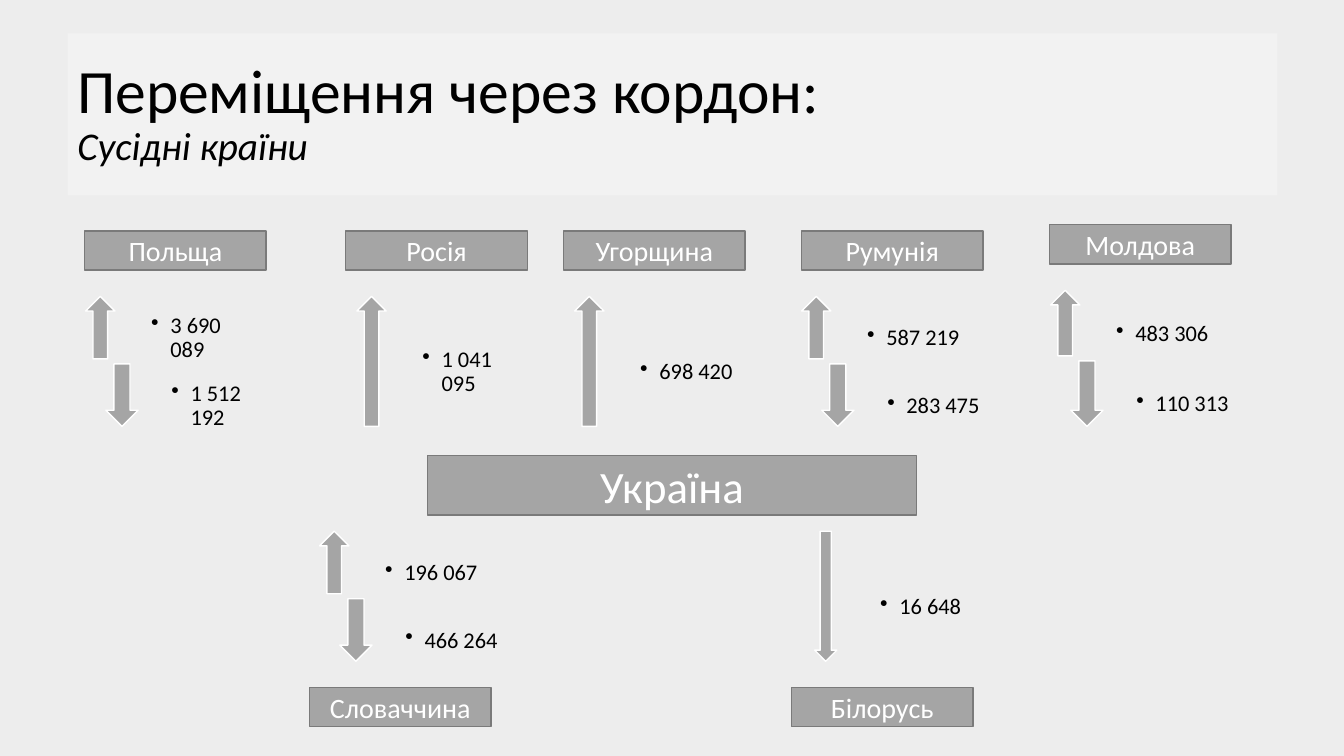
from lxml import etree
from pptx import Presentation
from pptx.dml.color import RGBColor
from pptx.enum import shapes, text
from pptx.oxml import ns
from pptx.util import Inches, Pt

BACK = RGBColor(0xED, 0xED, 0xED)
PANEL = RGBColor(0xF2, 0xF2, 0xF2)
GREY = RGBColor(0xA5, 0xA5, 0xA5)
EDGE = RGBColor(0x7A, 0x7A, 0x7A)
WHITE = RGBColor(0xFF, 0xFF, 0xFF)
BLACK = RGBColor(0, 0, 0)
SHAPE = shapes.MSO_SHAPE

prs = Presentation()
prs.slide_width, prs.slide_height = Inches(13.33), Inches(7.5)
s = prs.slides.add_slide(prs.slide_layouts[6])
s.background.fill.solid()
s.background.fill.fore_color.rgb = BACK


def add_block(kind, x, y, w, h, fill=GREY, line=None, label="", size=20):
    sp = s.shapes.add_shape(kind, Inches(x), Inches(y), Inches(w), Inches(h))
    sp.shadow.inherit = False
    sp.fill.solid()
    sp.fill.fore_color.rgb = fill
    if line is None:
        sp.line.fill.background()
    else:
        sp.line.color.rgb = line
        sp.line.width = Pt(1)
    if label:
        p = sp.text_frame.paragraphs[0]
        p.text = label
        p.alignment = text.PP_ALIGN.CENTER
        p.font.name, p.font.size, p.font.color.rgb = "Calibri", Pt(size), WHITE
    return sp


def add_flow(kind, x, y, w, h, value):
    add_block(kind, x, y, w, h, line=WHITE)
    box_h = 0.6
    tb = s.shapes.add_textbox(Inches(x + 0.53), Inches(y + h / 2 + 0.11 - box_h / 2),
                              Inches(1.21), Inches(box_h))
    tf = tb.text_frame
    tf.word_wrap = True
    tf.vertical_anchor = text.MSO_ANCHOR.MIDDLE
    tf.margin_left = tf.margin_right = Inches(0.12)
    tf.margin_top = tf.margin_bottom = 0
    p = tf.paragraphs[0]
    p.text = value
    p.line_spacing = 0.9
    p.font.name, p.font.size, p.font.color.rgb = "Calibri", Pt(16), BLACK
    pPr = p._p.get_or_add_pPr()
    pPr.set("marL", str(Inches(0.19)))
    pPr.set("indent", str(-Inches(0.19)))
    bullet = etree.Element(ns.qn("a:buChar"), char="•")
    pPr.insert_element_before(bullet, "a:tabLst", "a:defRPr", "a:extLst")


title = add_block(SHAPE.RECTANGLE, 0.67, 0.33, 12, 1.61, PANEL)
tf = title.text_frame
tf.vertical_anchor = text.MSO_ANCHOR.MIDDLE
p = tf.paragraphs[0]
p.alignment = text.PP_ALIGN.LEFT
p.line_spacing = 0.9
p.font.name, p.font.color.rgb = "Calibri", BLACK
for line, size, italic in (("Переміщення через кордон:", 44, False), ("Сусідні країни", 28, True)):
    if p.runs:
        p.add_line_break()
    r = p.add_run()
    r.text = line
    r.font.name, r.font.size, r.font.italic = "Calibri", Pt(size), italic
    r.font.color.rgb = BLACK

add_block(SHAPE.RECTANGLE, 4.24, 4.52, 4.85, 0.59, GREY, EDGE, "Україна", 32)

# name, label left, label top, arrow left, arrow top, arrow bottom, out, in
countries = [
    ("Польща", 0.84, 2.29, 0.85, 2.94, 4.23, "3 690 089", ""),
    ("Росія", 3.43, 2.29, 3.54, 2.94, 4.23, "1 041 095", ""),
    ("Угорщина", 5.59, 2.29, 5.7, 2.94, 4.23, "698 420", ""),
    ("Румунія", 7.95, 2.29, 7.95, 2.94, 4.23, "587 219", "283 475"),
    ("Молдова", 10.41, 2.23, 10.42, 2.88, 4.23, "483 306", "110 313"),
    ("Словаччина", 3.07, 6.82, 3.17, 5.27, 6.56, "196 067", "466 264"),
    ("Білорусь", 7.85, 6.82, 8.08, 5.27, 6.56, "", "16 648"),
]
countries[0] = countries[0][:7] + ("1 512 192",)
GAP = 0.05

for name, left, label_y, x, top, bottom, up, down in countries:
    add_block(SHAPE.RECTANGLE, left, label_y, 1.8, 0.39, GREY, EDGE, name)
    if up and down:
        h = (bottom - top - GAP) / 2
        add_flow(SHAPE.UP_ARROW, x, top, 0.29, h, up)
        add_flow(SHAPE.DOWN_ARROW, x + 0.2, bottom - h, 0.32, h, down)
    elif up:
        add_flow(SHAPE.UP_ARROW, x, top, 0.29, bottom - top, up)
    else:
        add_flow(SHAPE.DOWN_ARROW, x, top, 0.22, bottom - top, down)

prs.save("out.pptx")
